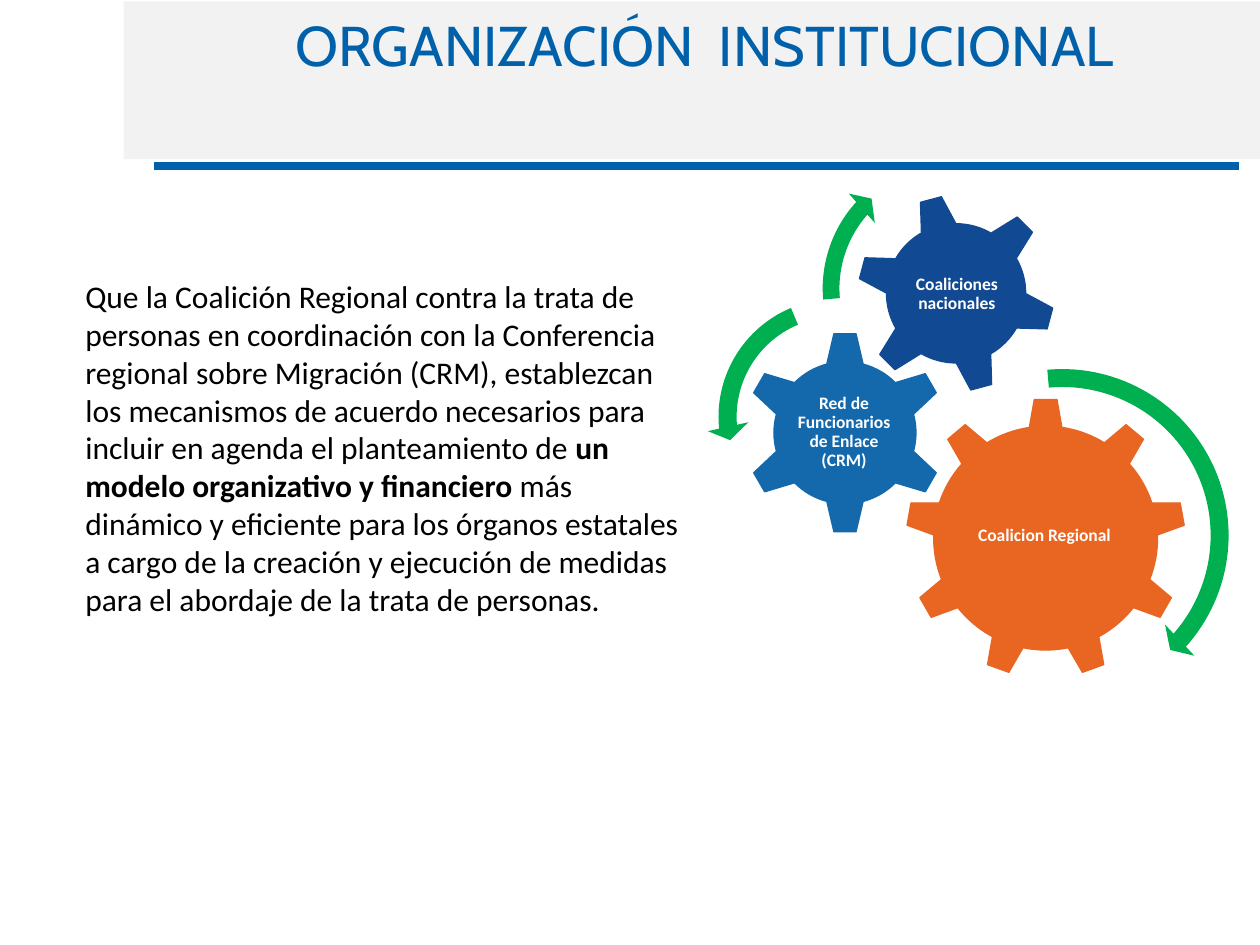
"""Build the slide on institutional organisation with three gears and a paragraph."""
import dataclasses

import lxml.etree
import pptx
import pptx.dml.color
import pptx.enum.shapes
import pptx.enum.text
import pptx.oxml.ns
import pptx.util

Cm = pptx.util.Cm
Pt = pptx.util.Pt
SHAPE = pptx.enum.shapes.MSO_SHAPE
ALIGN = pptx.enum.text.PP_ALIGN
ANCHOR = pptx.enum.text.MSO_ANCHOR
qn = pptx.oxml.ns.qn


@dataclasses.dataclass(frozen=True)
class Theme:
    title_font: str = "Cabin"
    body_font: str = "Calibri"
    title_size: float = 32
    body_size: float = 18
    label_size: float = 10
    accent: str = "0061AA"
    band: str = "F2F2F2"
    text: str = "000000"
    label: str = "FFFFFF"
    arrow: str = "00B050"
    regional: str = "E96622"
    officers: str = "1468AC"
    national: str = "114A92"


class SlideBuilder:
    def __init__(self, slide, theme):
        self.slide = slide
        self.theme = theme

    def color(self, value):
        return pptx.dml.color.RGBColor.from_string(value)

    def place(self, shape, left, top, width, height):
        shape.left, shape.top = Cm(left), Cm(top)
        shape.width, shape.height = Cm(width), Cm(height)

    def frame(self, shape, anchor, insets):
        frame = shape.text_frame
        frame.word_wrap = True
        frame.auto_size = pptx.enum.text.MSO_AUTO_SIZE.NONE
        frame.vertical_anchor = anchor
        frame.margin_left, frame.margin_top, frame.margin_right, frame.margin_bottom = map(Cm, insets)
        return frame

    def style(self, paragraph, name, size, color, bold=None):
        font = paragraph.font
        font.name, font.size, font.bold = name, Pt(size), bold
        font.color.rgb = self.color(color)

    def rule(self, left, top, right):
        line = self.slide.shapes.add_connector(
            pptx.enum.shapes.MSO_CONNECTOR.STRAIGHT, Cm(left), Cm(top), Cm(right), Cm(top))
        line.line.color.rgb = self.color(self.theme.accent)
        line.line.width = Pt(4.5)
        lxml.etree.SubElement(line._element.spPr, qn("a:effectLst"))

    def title(self, text, *box):
        shape = self.slide.shapes.title
        self.place(shape, *box)
        shape.fill.solid()
        shape.fill.fore_color.rgb = self.color(self.theme.band)
        frame = self.frame(shape, ANCHOR.TOP, (0.75, 0.5, 0.5, 0.13))
        frame.text = text
        paragraph = frame.paragraphs[0]
        paragraph.alignment = ALIGN.CENTER
        paragraph.line_spacing = 0.75
        self.style(paragraph, self.theme.title_font, self.theme.title_size, self.theme.accent)

    def body(self, parts, *box):
        shape = self.slide.placeholders[1]
        self.place(shape, *box)
        paragraph = self.frame(shape, ANCHOR.TOP, (0.25, 0.13, 0.25, 0.13)).paragraphs[0]
        properties = paragraph._p.get_or_add_pPr()
        properties.set("marL", "0")
        properties.set("indent", "0")
        lxml.etree.SubElement(properties, qn("a:buNone"))
        paragraph.space_before = Pt(0)
        self.style(paragraph, self.theme.body_font, self.theme.body_size, self.theme.text)
        for text, bold in parts:
            run = paragraph.add_run()
            run.text = text
            run.font.bold = bold

    def solid(self, kind, left, top, size, color):
        shape = self.slide.shapes.add_shape(kind, Cm(left), Cm(top), Cm(size), Cm(size))
        shape.shadow.inherit = False
        shape.fill.solid()
        shape.fill.fore_color.rgb = self.color(color)
        return shape

    def gear(self, kind, left, top, size, color, rotation=0):
        shape = self.solid(kind, left, top, size, color)
        shape.line.color.rgb = self.color(color)
        shape.line.width = Pt(0.75)
        shape.rotation = rotation

    def label(self, text, *box):
        shape = self.slide.shapes.add_textbox(*map(Cm, box))
        frame = self.frame(shape, ANCHOR.MIDDLE, (0.03,) * 4)
        frame.text = text
        paragraph = frame.paragraphs[0]
        paragraph.alignment = ALIGN.CENTER
        paragraph.line_spacing = 0.9
        self.style(paragraph, self.theme.body_font, self.theme.label_size, self.theme.label, True)

    def arrow(self, kind, left, top, size, adjustments):
        shape = self.solid(kind, left, top, size, self.theme.arrow)
        shape.line.fill.background()
        for index, value in enumerate(adjustments):
            shape.adjustments[index] = value


def main():
    presentation = pptx.Presentation()
    presentation.slide_width, presentation.slide_height = Cm(25.4), Cm(19.05)
    theme = Theme()
    builder = SlideBuilder(presentation.slides.add_slide(presentation.slide_layouts[1]), theme)

    builder.rule(3.1, 3.35, 24.97)
    builder.title("ORGANIZACIÓN  INSTITUCIONAL", 2.49, 0.03, 23.19, 3.18)

    builder.gear(SHAPE.GEAR_9, 18.26, 8.03, 5.64, theme.regional)
    builder.label("Coalicion Regional", 19.38, 9.35, 3.35, 2.9)
    builder.gear(SHAPE.GEAR_6, 14.99, 6.68, 4.09, theme.officers)
    builder.label("Red de Funcionarios de Enlace (CRM)", 16, 7.72, 2.03, 2.01)
    builder.gear(SHAPE.GEAR_6, 17.27, 3.91, 4.01, theme.national, 345)
    builder.label("Coaliciones nacionales", 18.16, 4.8, 2.26, 2.26)

    builder.arrow(SHAPE.CIRCULAR_ARROW, 17.81, 7.19, 7.21, (0.05, 2.99, 25.03, 158.9, 0.06))
    builder.arrow(SHAPE.LEFT_CIRCULAR_ARROW, 14.25, 5.79, 5.23, (0.07, 4.3, 104.89, 148.38, 0.08))
    builder.arrow(SHAPE.CIRCULAR_ARROW, 16.36, 3, 5.64, (0.06, 3.94, 133.14, 105.08, 0.07))

    builder.body((
        ("Que la Coalición Regional contra la trata de personas en coordinación con la "
         "Conferencia regional sobre Migración (CRM), establezcan los mecanismos de acuerdo "
         "necesarios para incluir en agenda el planteamiento de ", False),
        ("un modelo organizativo y financiero", True),
        (" más dinámico y eficiente para los órganos estatales a cargo de la creación y "
         "ejecución de medidas para el abordaje de la trata de personas.", False),
    ), 1.47, 5.46, 12.7, 7.95)

    presentation.save("out.pptx")


if __name__ == "__main__":
    main()
